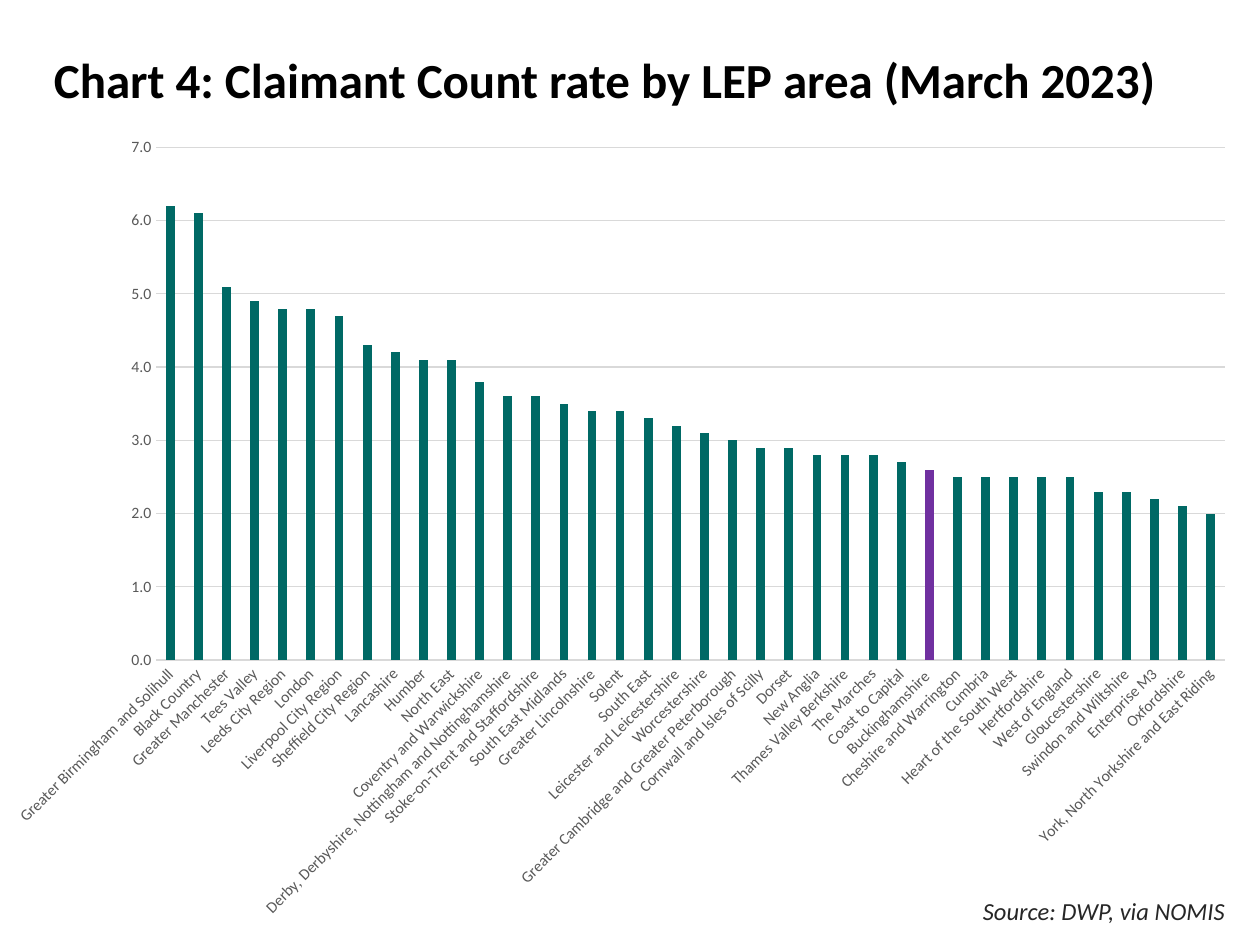
from lxml import etree
from pptx import Presentation
from pptx.chart.data import CategoryChartData
from pptx.dml.color import RGBColor
from pptx.enum import chart as charts, text
from pptx.oxml.ns import qn
from pptx.util import Inches, Pt

FONT = "Calibri"
BLACK = RGBColor(0x00, 0x00, 0x00)
DARK_GREY = RGBColor(0x26, 0x26, 0x26)
LABEL_GREY = RGBColor(0x59, 0x59, 0x59)
LINE_GREY = RGBColor(0xD9, 0xD9, 0xD9)
WHITE = RGBColor(0xFF, 0xFF, 0xFF)
TEAL = RGBColor(0x00, 0x69, 0x65)
PURPLE = RGBColor(0x70, 0x30, 0xA0)

TITLE = "Chart 4: Claimant Count rate by LEP area (March 2023)"
SOURCE = "Source: DWP, via NOMIS"
HIGHLIGHT = "Buckinghamshire "
RATES = [
    ("Greater Birmingham and Solihull", 6.2),
    ("Black Country", 6.1),
    ("Greater Manchester", 5.1),
    ("Tees Valley", 4.9),
    ("Leeds City Region", 4.8),
    ("London", 4.8),
    ("Liverpool City Region", 4.7),
    ("Sheffield City Region", 4.3),
    ("Lancashire", 4.2),
    ("Humber", 4.1),
    ("North East", 4.1),
    ("Coventry and Warwickshire", 3.8),
    ("Derby, Derbyshire, Nottingham and Nottinghamshire", 3.6),
    ("Stoke-on-Trent and Staffordshire", 3.6),
    ("South East Midlands", 3.5),
    ("Greater Lincolnshire", 3.4),
    ("Solent", 3.4),
    ("South East", 3.3),
    ("Leicester and Leicestershire", 3.2),
    ("Worcestershire", 3.1),
    ("Greater Cambridge and Greater Peterborough", 3.0),
    ("Cornwall and Isles of Scilly", 2.9),
    ("Dorset", 2.9),
    ("New Anglia", 2.8),
    ("Thames Valley Berkshire", 2.8),
    ("The Marches", 2.8),
    ("Coast to Capital", 2.7),
    (HIGHLIGHT, 2.6),
    ("Cheshire and Warrington", 2.5),
    ("Cumbria", 2.5),
    ("Heart of the South West", 2.5),
    ("Hertfordshire", 2.5),
    ("West of England", 2.5),
    ("Gloucestershire", 2.3),
    ("Swindon and Wiltshire", 2.3),
    ("Enterprise M3", 2.2),
    ("Oxfordshire", 2.1),
    ("York, North Yorkshire and East Riding", 2.0),
]
PLOT_LAYOUT = {"x": 0.132, "y": 0.031, "w": 0.848, "h": 0.632}  # shares of the chart frame


def style_font(font, size, color, bold=False, italic=False):
    font.name, font.size, font.bold, font.italic = FONT, Pt(size), bold, italic
    font.color.rgb = color


def add_text(slide, box, content, size, color, **emphasis):
    shape = slide.shapes.add_textbox(*map(Inches, box))
    shape.text_frame.word_wrap = True
    paragraph = shape.text_frame.paragraphs[0]
    run = paragraph.add_run()
    run.text = content
    style_font(run.font, size, color, **emphasis)
    return shape, paragraph


def style_axis(axis, line):
    axis.major_tick_mark = axis.minor_tick_mark = charts.XL_TICK_MARK.NONE
    style_font(axis.tick_labels.font, 9, LABEL_GREY)
    if line is None:
        axis.format.line.fill.background()
    else:
        style_line(axis.format.line)


def style_line(line):
    line.color.rgb = LINE_GREY
    line.width = Pt(0.75)


def place_plot(chart):
    """Fix the inner plot area, leaving room for the slanted labels."""
    plot_area = chart._chartSpace.chart.plotArea
    for old in plot_area.findall(qn("c:layout")):
        plot_area.remove(old)
    layout = etree.Element(qn("c:layout"))
    plot_area.insert(0, layout)
    manual = etree.SubElement(layout, qn("c:manualLayout"))
    settings = {"layoutTarget": "inner", "xMode": "edge", "yMode": "edge", **PLOT_LAYOUT}
    for name, value in settings.items():
        etree.SubElement(manual, qn(f"c:{name}")).set("val", str(value))


def add_rate_chart(slide):
    data = CategoryChartData(number_format="#,##0.0")
    data.categories = [area for area, _ in RATES]
    data.add_series("Series 1", [rate for _, rate in RATES])
    frame = slide.shapes.add_chart(
        charts.XL_CHART_TYPE.COLUMN_CLUSTERED,
        Inches(-0.08), Inches(0.97), Inches(10), Inches(6.44), data)
    chart = frame.chart
    chart.has_legend = chart.has_title = False
    style_font(chart.font, 10, BLACK)
    place_plot(chart)

    plot = chart.plots[0]
    plot.vary_by_categories = False
    plot.gap_width, plot.overlap = 219, -27
    series = plot.series[0]
    series.format.fill.solid()
    series.format.fill.fore_color.rgb = TEAL
    highlight = [area for area, _ in RATES].index(HIGHLIGHT)
    fill = series.points[highlight].format.fill
    fill.solid()
    fill.fore_color.rgb = PURPLE

    style_axis(chart.category_axis, LINE_GREY)
    slant = chart.category_axis._element.find(qn("c:txPr")).find(qn("a:bodyPr"))
    slant.set("rot", str(-45 * 60000))
    slant.set("vert", "horz")

    value_axis = chart.value_axis
    style_axis(value_axis, None)
    value_axis.minimum_scale, value_axis.maximum_scale, value_axis.major_unit = 0, 7, 1
    value_axis.tick_labels.number_format = "#,##0.0"
    value_axis.tick_labels.number_format_is_linked = False
    value_axis.has_major_gridlines = True
    style_line(value_axis.major_gridlines.format.line)


def main():
    presentation = Presentation()
    presentation.slide_width, presentation.slide_height = Inches(10), Inches(7.5)
    slide = presentation.slides.add_slide(presentation.slide_layouts[6])

    title, paragraph = add_text(slide, (0.33, 0.27, 9.36, 0.77), TITLE, 28, BLACK, bold=True)
    title.fill.solid()
    title.fill.fore_color.rgb = WHITE
    title.text_frame.vertical_anchor = text.MSO_ANCHOR.MIDDLE
    paragraph.line_spacing = 0.9

    source, paragraph = add_text(slide, (7.44, 7.06, 2.38, 0.34), SOURCE, 14, DARK_GREY, italic=True)
    source.text_frame.auto_size = text.MSO_AUTO_SIZE.SHAPE_TO_FIT_TEXT
    paragraph.alignment = text.PP_ALIGN.RIGHT

    add_rate_chart(slide)
    presentation.save("out.pptx")


if __name__ == "__main__":
    main()
